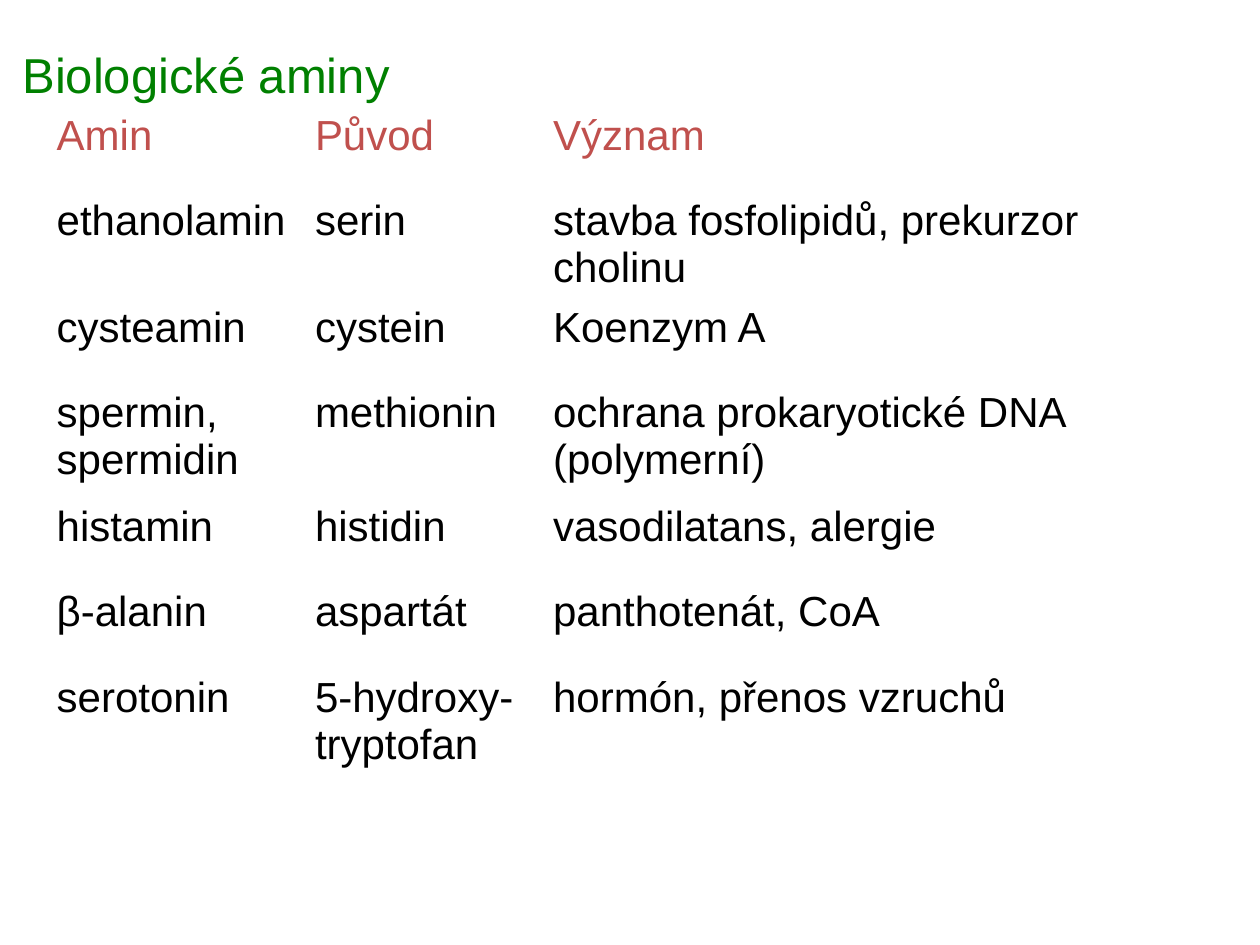
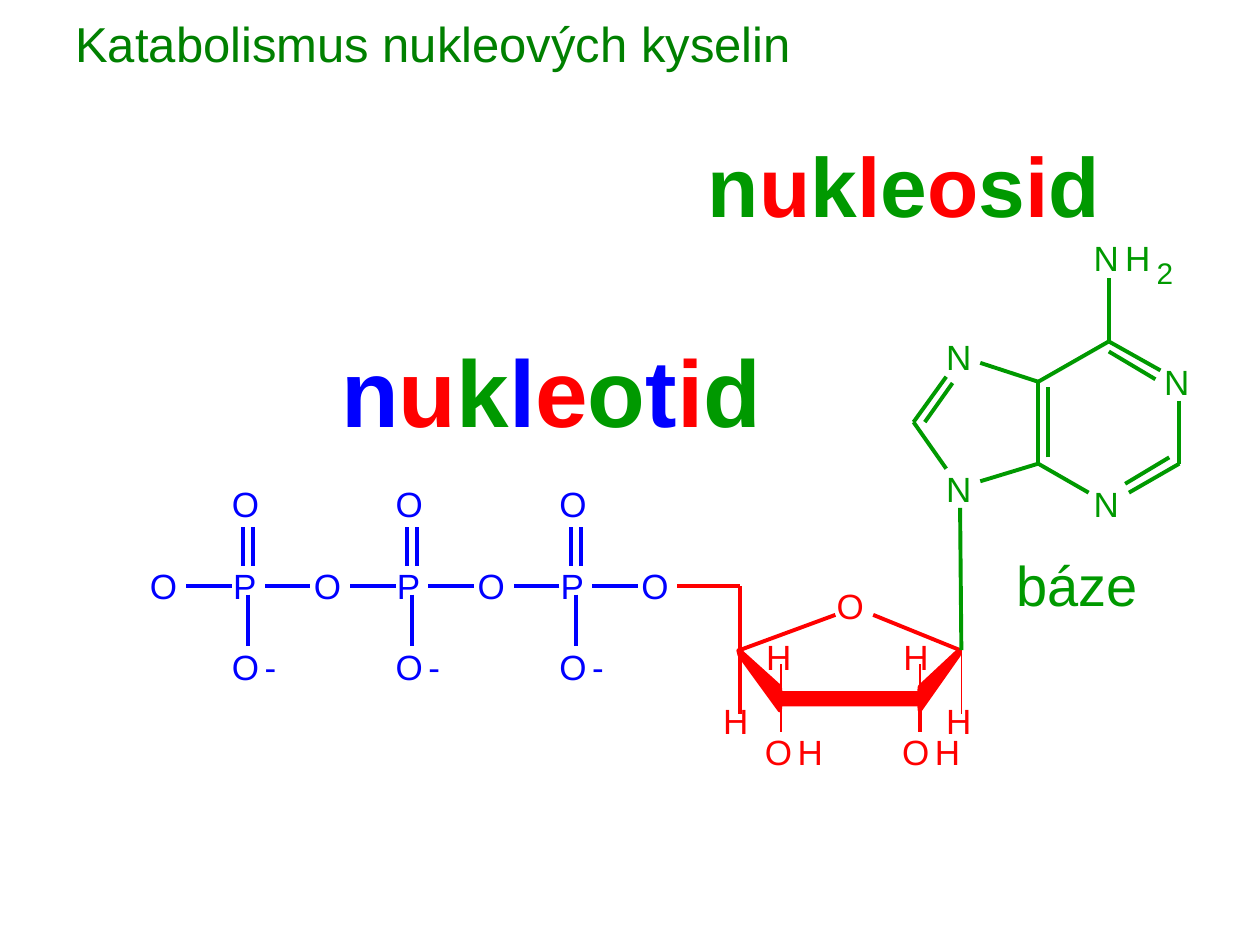
from itertools import cycle

from lxml.etree import SubElement
from pptx import Presentation
from pptx.dml.color import RGBColor
from pptx.enum.shapes import MSO_CONNECTOR
from pptx.enum.text import MSO_ANCHOR, MSO_AUTO_SIZE
from pptx.oxml.ns import qn
from pptx.util import Cm, Pt

# Shared look
FONT = "Arial"
TITLE_GREEN, HEADER_RED, BLACK = "008000", "C0504D", "000000"
GREEN, RED, BLUE = "009900", "FF0000", "0000FF"
BOND, THIN = 2.25, 1

AMINES = [
    ("Amin", "Původ", "Význam"),
    ("ethanolamin", "serin", "stavba fosfolipidů, prekurzor cholinu"),
    ("cysteamin", "cystein", "Koenzym A"),
    ("spermin, spermidin", "methionin", "ochrana prokaryotické DNA (polymerní)"),
    ("histamin", "histidin", "vasodilatans, alergie"),
    ("β-alanin", "aspartát", "panthotenát, CoA"),
    ("serotonin", "5-hydroxy-tryptofan", "hormón, přenos vzruchů"),
]
COLUMN_WIDTHS = (2.05, 1.89, 5.43)
ROW_HEIGHTS = (0.68, 0.68, 0.68, 0.9, 0.68, 0.68, 0.9)

# Molecule parts: bonds as x1, y1, x2, y2 and atoms as symbol, left, top
ATOM_WIDTHS = {"N": 0.2, "H": 0.2, "O": 0.22, "P": 0.19, "-": 0.09, "2": 0.13}

BASE_BONDS = [
    (9.36, 3.18, 9.36, 3.68), (9.36, 3.68, 8.96, 3.91), (9.28, 3.63, 8.93, 3.84),
    (8.64, 3.91, 8.24, 3.68), (8.24, 3.68, 8.24, 3.03), (8.32, 3.63, 8.32, 3.07),
    (8.24, 3.03, 8.8, 2.71), (9.21, 2.94, 8.8, 2.71), (9.17, 3.01, 8.8, 2.79),
    (8.24, 3.68, 7.78, 3.82), (7.51, 3.72, 7.25, 3.35), (7.25, 3.35, 7.51, 2.99),
    (7.34, 3.35, 7.56, 3.04), (8.24, 3.03, 7.78, 2.88), (8.8, 2.71, 8.8, 2.21),
    (7.62, 4.03, 7.63, 5.16),
]
BASE_ATOMS = [("N", 9.24, 2.86), ("N", 8.68, 3.83), ("N", 7.51, 3.71),
              ("N", 7.51, 2.66), ("N", 8.68, 1.88), ("H", 8.93, 1.88)]

SUGAR_THIN_BONDS = [(6.2, 5.54, 6.2, 5.81), (6.2, 5.54, 6.2, 5.27),
                    (7.63, 5.16, 7.63, 5.67), (7.3, 5.54, 7.3, 5.27)]
SUGAR_BONDS = [
    (7.3, 5.54, 7.3, 5.81), (7.62, 5.16, 6.93, 4.88), (6.63, 4.88, 5.87, 5.16),
    (5.87, 5.16, 5.87, 4.65), (5.87, 5.16, 5.87, 5.67), (5.87, 4.65, 5.37, 4.65),
]
SUGAR_WEDGES = [
    [(7.28, 5.5), (7.29, 5.54), (7.28, 5.59), (6.21, 5.59), (6.2, 5.54), (6.21, 5.5)],
    [(7.6, 5.17), (7.62, 5.16), (7.61, 5.2), (7.3, 5.64), (7.29, 5.54), (7.3, 5.45)],
    [(5.87, 5.2), (5.86, 5.16), (5.88, 5.17), (6.19, 5.45), (6.2, 5.54), (6.19, 5.64)],
]
SUGAR_ATOMS = [("O", 6.64, 4.64), ("O", 7.16, 5.8), ("H", 7.42, 5.8),
               ("O", 6.07, 5.8), ("H", 6.33, 5.8), ("H", 7.17, 5.04),
               ("H", 6.08, 5.04), ("H", 7.51, 5.55), ("H", 5.74, 5.55)]

PHOSPHATE_PITCH, PHOSPHATE_COUNT = 1.3, 3
PHOSPHATE_BONDS = [(2.46, 4.65, 2.1, 4.65), (1.84, 4.65, 1.48, 4.65),
                   (1.97, 4.72, 1.97, 5.13), (1.93, 4.49, 1.93, 4.18),
                   (2.01, 4.49, 2.01, 4.18)]
PHOSPHATE_ATOMS = [("O", 1.19, 4.48), ("P", 1.85, 4.48), ("O", 1.84, 5.12),
                   ("-", 2.1, 5.12), ("O", 1.84, 3.83)]


def rgb(value):
    return RGBColor.from_string(value)


def cm(*inches):
    """Turn the inch grid of the layout into Cm lengths."""
    return [Cm(2.54 * v) for v in inches]


def apply(obj, **values):
    for name, value in values.items():
        setattr(obj, name, value)


def add_run(p, text, size, color, bold=False):
    r = p.add_run()
    r.text = text
    apply(r.font, name=FONT, size=Pt(size), bold=bold)
    r.font.color.rgb = rgb(color)


def add_text(shapes, box, runs, size, bold=False, **frame):
    tf = shapes.add_textbox(*cm(*box)).text_frame
    apply(tf, **{"word_wrap": False, "auto_size": MSO_AUTO_SIZE.SHAPE_TO_FIT_TEXT, **frame})
    for text, color in runs:
        add_run(tf.paragraphs[0], text, size, color, bold)


def add_title(s, box, text):
    add_text(s.shapes, box, [(text, TITLE_GREEN)], 28, word_wrap=True,
             auto_size=MSO_AUTO_SIZE.NONE, vertical_anchor=MSO_ANCHOR.MIDDLE)


def add_amine_table(s):
    box = cm(0.35, 0.84, sum(COLUMN_WIDTHS), sum(ROW_HEIGHTS))
    table = s.shapes.add_table(len(AMINES), len(COLUMN_WIDTHS), *box).table
    apply(table, first_row=False, horz_banding=False)
    for column, width in zip(table.columns, cm(*COLUMN_WIDTHS)):
        column.width = width
    for i, (row, height) in enumerate(zip(table.rows, cm(*ROW_HEIGHTS))):
        row.height = height
        for cell, text in zip(row.cells, AMINES[i]):
            cell.fill.background()
            add_run(cell.text_frame.paragraphs[0], text, 24, BLACK if i else HEADER_RED)


def add_bonds(shapes, bonds, color, width=BOND, dx=0):
    for x1, y1, x2, y2 in bonds:
        ends = cm(x1 + dx, y1, x2 + dx, y2)
        sp = shapes.add_connector(MSO_CONNECTOR.STRAIGHT, *ends)
        sp.line.color.rgb = rgb(color)
        sp.line.width = Pt(width)
        SubElement(sp._element.spPr, qn("a:effectLst"))


def add_atoms(shapes, atoms, color, size=20, height=0.33, dx=0):
    for symbol, x, y in atoms:
        add_text(shapes, (x + dx, y, ATOM_WIDTHS[symbol], height), [(symbol, color)], size,
                 margin_left=0, margin_right=0, margin_top=0, margin_bottom=0)


def add_wedge(shapes, points, color):
    start, *rest = [cm(*point) for point in points]
    builder = shapes.build_freeform(*start)
    builder.add_line_segments(rest, close=True)
    sp = builder.convert_to_shape()
    sp.shadow.inherit = False
    sp.fill.solid()
    sp.fill.fore_color.rgb = rgb(color)
    sp.line.color.rgb = rgb(color)
    sp.line.width = Pt(BOND)


def add_molecule(s):
    shapes = s.shapes.add_group_shape().shapes
    # Sugar
    add_bonds(shapes, SUGAR_THIN_BONDS, RED, THIN)
    for points in SUGAR_WEDGES:
        add_wedge(shapes, points, RED)
    add_bonds(shapes, SUGAR_BONDS, RED)
    add_atoms(shapes, SUGAR_ATOMS, RED)
    # Base
    add_bonds(shapes, BASE_BONDS, GREEN)
    add_atoms(shapes, BASE_ATOMS, GREEN)
    add_atoms(shapes, [("2", 9.18, 2.02)], GREEN, 17, 0.28)
    # Phosphate chain, closed by the oxygen that meets the sugar
    for i in range(PHOSPHATE_COUNT):
        add_bonds(shapes, PHOSPHATE_BONDS, BLUE, dx=i * PHOSPHATE_PITCH)
        add_atoms(shapes, PHOSPHATE_ATOMS, BLUE, dx=i * PHOSPHATE_PITCH)
    add_atoms(shapes, PHOSPHATE_ATOMS[:1], BLUE, dx=PHOSPHATE_COUNT * PHOSPHATE_PITCH)


def add_striped_word(s, box, word, colors, size):
    add_text(s.shapes, box, zip(word, cycle(colors)), size, bold=True)


def main():
    prs = Presentation()
    prs.slide_width, prs.slide_height = cm(10, 7.5)
    blank = prs.slide_layouts[6]

    # Biological amines
    s = prs.slides.add_slide(blank)
    add_title(s, (0.08, 0.08, 8.07, 1.02), "Biologické aminy")
    add_amine_table(s)

    # Nucleotide structure
    s = prs.slides.add_slide(blank)
    add_title(s, (0.5, 0, 9, 0.68), "Katabolismus nukleových kyselin")
    add_molecule(s)
    add_striped_word(s, (2.61, 2.59, 3.53, 1), "nukleotid", (BLUE, RED, GREEN), 54)
    add_striped_word(s, (5.52, 1.01, 3.32, 0.9), "nukleosid", (GREEN, RED), 48)
    add_text(s.shapes, (7.97, 4.32, 1.2, 0.63), [("báze", GREEN)], 32)

    prs.save("out.pptx")


if __name__ == "__main__":
    main()
